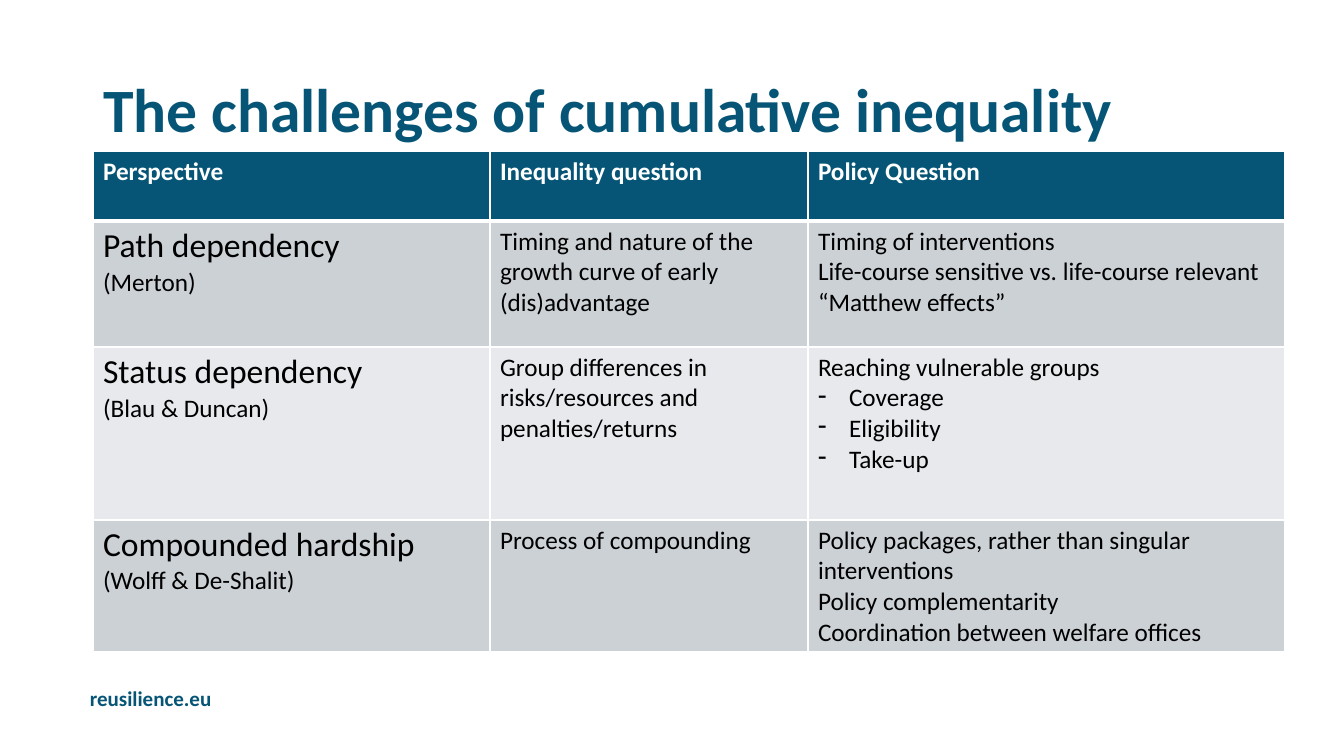
from lxml.etree import SubElement
from pptx import Presentation
from pptx.dml.color import RGBColor
from pptx.enum.text import MSO_ANCHOR, MSO_AUTO_SIZE, PP_ALIGN
from pptx.oxml.ns import qn
from pptx.util import Pt

PX = 914400 / 100.8
FONT = "Calibri"
TEAL, WHITE, BLACK = "065576", "FFFFFF", "000000"
BANDS = ["CCD1D6", "E7E9EC"]

TITLE = "The challenges of cumulative inequality"
SITE = "reusilience.eu"
HEADER = ["Perspective", "Inequality question", "Policy Question"]
ROWS = [
    (["Path dependency", "(Merton)"],
     ["Timing and nature of the growth curve of early (dis)advantage"],
     ["Timing of interventions", "Life-course sensitive vs. life-course relevant",
      "“Matthew effects”"]),
    (["Status dependency", "(Blau & Duncan)"],
     ["Group differences in risks/resources and penalties/returns"],
     ["Reaching vulnerable groups", "- Coverage", "- Eligibility", "- Take-up"]),
    (["Compounded hardship", "(Wolff & De-Shalit)"],
     ["Process of compounding"],
     ["Policy packages, rather than singular interventions",
      "Policy complementarity", "Coordination between welfare offices"]),
]
COL_WIDTHS = [397, 318, 477]
ROW_HEIGHTS = [70, 126, 173, 132]


def px(n):
    return round(n * PX)


def rgb(color):
    return RGBColor.from_string(color)


def write(p, text, size=18, color=BLACK, bold=False):
    if text.startswith("- "):
        text = text[2:]
        pPr = p._p.get_or_add_pPr()
        pPr.set("marL", str(px(31)))
        pPr.set("indent", str(-px(31)))
        SubElement(pPr, qn("a:buChar"), char="-")
    r = p.add_run()
    r.text = text
    r.font.name = FONT
    r.font.size = Pt(size)
    r.font.bold = bold
    r.font.color.rgb = rgb(color)


def style_cell(cell, fill, bottom=1):
    tcPr = cell._tc.get_or_add_tcPr()
    for side, width in (("L", 1), ("R", 1), ("T", 1), ("B", bottom)):
        ln = SubElement(tcPr, qn(f"a:ln{side}"), w=str(Pt(width)))
        SubElement(SubElement(ln, qn("a:solidFill")), qn("a:srgbClr"), val=WHITE)
    cell.fill.solid()
    cell.fill.fore_color.rgb = rgb(fill)


def add_title(s):
    title = s.shapes.title
    title.left, title.top, title.width, title.height = map(px, (93, 40, 1159, 146))
    tf = title.text_frame
    tf.auto_size = MSO_AUTO_SIZE.NONE
    tf.word_wrap = True
    tf.vertical_anchor = MSO_ANCHOR.MIDDLE
    p = tf.paragraphs[0]
    p.alignment = PP_ALIGN.LEFT
    p.line_spacing = 0.9
    write(p, TITLE, size=44, color=TEAL, bold=True)


def add_site(s):
    tf = s.shapes.add_textbox(*map(px, (80, 681, 219, 35))).text_frame
    tf.word_wrap = True
    write(tf.paragraphs[0], SITE, size=15, color=TEAL, bold=True)


def add_perspectives(s):
    box = map(px, (93, 151, sum(COL_WIDTHS), sum(ROW_HEIGHTS)))
    table = s.shapes.add_table(len(ROW_HEIGHTS), len(COL_WIDTHS), *box).table
    for col, width in zip(table.columns, COL_WIDTHS):
        col.width = px(width)
    for row, height in zip(table.rows, ROW_HEIGHTS):
        row.height = px(height)
    for j, text in enumerate(HEADER):
        cell = table.cell(0, j)
        style_cell(cell, TEAL, bottom=3)
        write(cell.text_frame.paragraphs[0], text, color=WHITE, bold=True)
    for i, row in enumerate(ROWS):
        for j, lines in enumerate(row):
            cell = table.cell(i + 1, j)
            style_cell(cell, BANDS[i % 2])
            tf = cell.text_frame
            for k, text in enumerate(lines):
                p = tf.add_paragraph() if k else tf.paragraphs[0]
                write(p, text, size=24 if j == k == 0 else 18)


def main():
    prs = Presentation()
    prs.slide_width, prs.slide_height = px(1344), px(756)
    s = prs.slides.add_slide(prs.slide_layouts[5])
    add_site(s)
    add_title(s)
    add_perspectives(s)
    prs.save("out.pptx")


if __name__ == "__main__":
    main()
